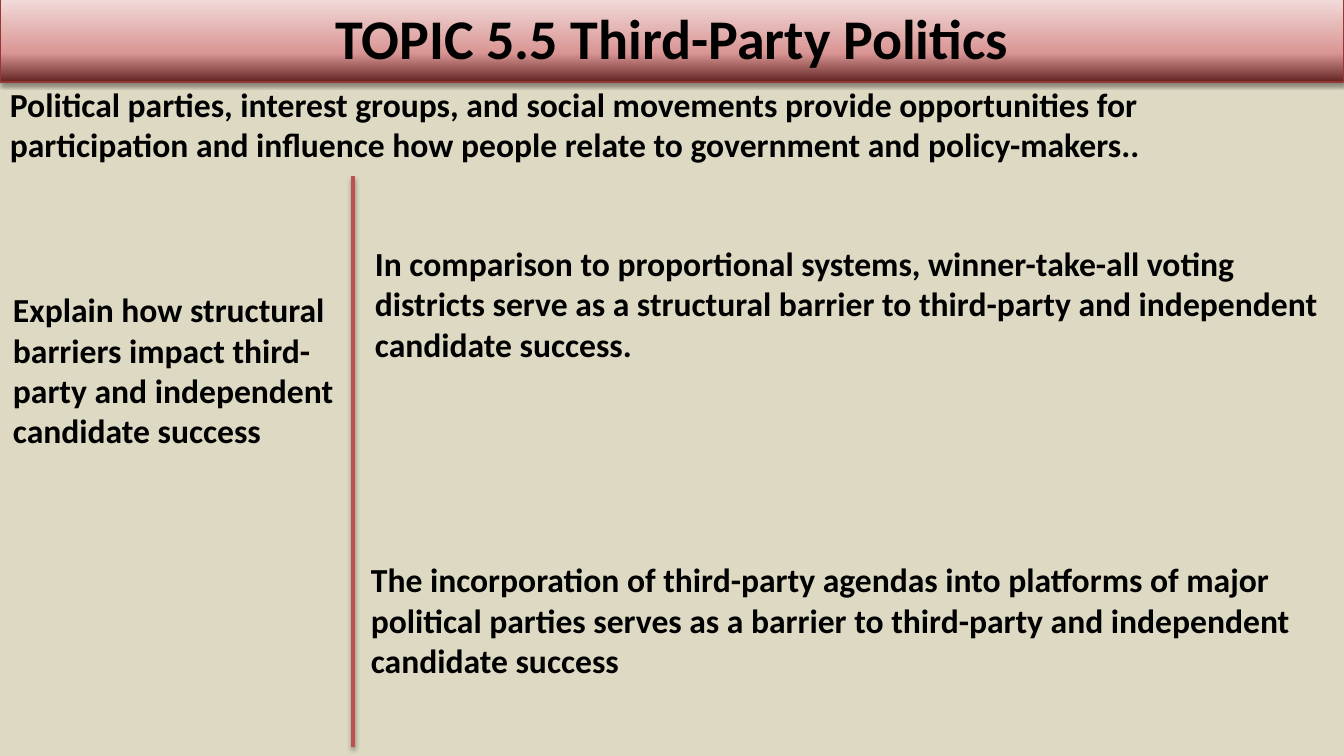
from dataclasses import dataclass

from lxml import etree
from pptx import Presentation
from pptx.dml.color import RGBColor as RGB
from pptx.enum.shapes import MSO_CONNECTOR as CONN
from pptx.enum.text import MSO_ANCHOR as ANCHOR, MSO_AUTO_SIZE as AUTO, PP_ALIGN as ALIGN
from pptx.oxml.ns import qn
from pptx.util import Emu, Pt

PX = 9144  # EMU per px, 100 px to the inch


@dataclass(frozen=True)
class Theme:
    font: str = "Calibri"
    title_size: int = 40
    body_size: int = 24
    text: str = "000000"
    background: str = "DDD9C3"
    banner_line: str = "953735"
    divider: str = "C0504D"
    # Banner gradient from top to bottom: percent, colour
    banner: tuple = ((0, "F2DCDB"), (65, "D99694"), (100, "632523"))


THEME = Theme()


def px(*lengths):
    return [Emu(n * PX) for n in lengths]


def rgb(value):
    return RGB.from_string(value)


def add_shadow(shape, opacity, distance):
    effects = etree.SubElement(shape._element.spPr, qn("a:effectLst"))
    shadow = etree.SubElement(effects, qn("a:outerShdw"), blurRad=str(Pt(3.1)),
                              dist=str(Pt(distance)), dir="5400000", rotWithShape="0")
    color = etree.SubElement(shadow, qn("a:srgbClr"), val="000000")
    etree.SubElement(color, qn("a:alpha"), val=str(opacity * 1000))


def fill_gradient(shape, stops):
    shape.fill.gradient()
    shape.fill.gradient_angle = 270
    stop_list = shape._element.spPr.find(".//" + qn("a:gsLst"))
    for old in list(stop_list):
        stop_list.remove(old)
    for percent, value in stops:
        stop = etree.SubElement(stop_list, qn("a:gs"), pos=str(percent * 1000))
        etree.SubElement(stop, qn("a:srgbClr"), val=value)


def write(shape, lines, size, align=ALIGN.LEFT):
    tf = shape.text_frame
    tf.word_wrap = True
    tf.auto_size = AUTO.SHAPE_TO_FIT_TEXT
    tf.vertical_anchor = ANCHOR.TOP
    tf.text = "\n".join(lines)
    for p in tf.paragraphs:
        p.alignment = align
        p.font.name, p.font.size, p.font.bold = THEME.font, Pt(size), True
        p.font.color.rgb = rgb(THEME.text)


def add_banner(s, text, box):
    title = s.shapes.title
    title.left, title.top, title.width, title.height = px(*box)
    fill_gradient(title, THEME.banner)
    title.line.color.rgb = rgb(THEME.banner_line)
    title.line.width = Pt(0.75)
    add_shadow(title, 38, 1.6)
    write(title, [text], THEME.title_size, ALIGN.CENTER)


def add_text(s, box, *lines):
    write(s.shapes.add_textbox(*px(*box)), lines, THEME.body_size)


def add_divider(s, x, top, bottom):
    line = s.shapes.add_connector(CONN.STRAIGHT, *px(x, top, x, bottom))
    line.line.color.rgb = rgb(THEME.divider)
    line.line.width = Pt(3)
    add_shadow(line, 35, 1.8)


def main():
    prs = Presentation()
    prs.slide_width, prs.slide_height = px(1333, 750)
    s = prs.slides.add_slide(prs.slide_layouts[5])
    s.background.fill.solid()
    s.background.fill.fore_color.rgb = rgb(THEME.background)

    # Title banner and the main idea below it
    add_banner(s, "TOPIC 5.5 Third-Party Politics", (0, -2, 1333, 77))
    add_text(s, (0, 78, 1333, 91),
             "Political parties, interest groups, and social movements provide opportunities for",
             "participation and influence how people relate to government and policy-makers..")

    # Learning objective, left of the divider
    add_text(s, (3, 282, 388, 172),
             "Explain how structural barriers impact third-party and independent candidate success")
    add_divider(s, 350, 175, 741)

    # Essential knowledge, right of the divider
    add_text(s, (362, 236, 975, 131),
             "In comparison to proportional systems, winner-take-all voting districts serve as "
             "a structural barrier to third-party and independent candidate success.")
    add_text(s, (358, 550, 975, 131),
             "The incorporation of third-party agendas into platforms of major political parties "
             "serves as a barrier to third-party and independent candidate success")

    prs.save("out.pptx")


if __name__ == "__main__":
    main()
